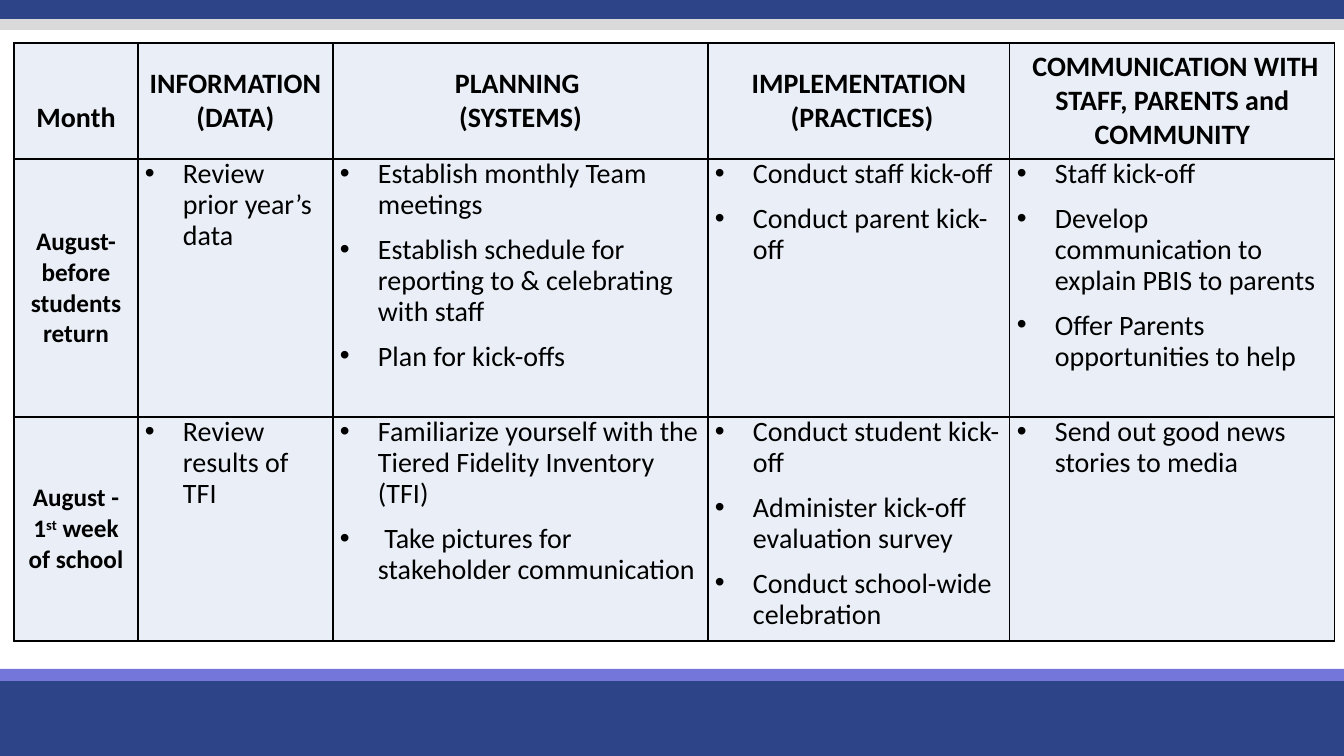
"""Build a monthly planning table slide with coloured bands above and below."""
from lxml import etree
from pptx import Presentation
from pptx import util as u
from pptx.dml.color import RGBColor
from pptx.enum import shapes, text
from pptx.oxml import ns

NAVY = RGBColor(0x2E, 0x44, 0x88)
VIOLET = RGBColor(0x74, 0x76, 0xDA)
GREY = RGBColor(0xD9, 0xD9, 0xD9)
PALE = RGBColor(0xEA, 0xEF, 0xF7)
BLACK = RGBColor(0, 0, 0)

BANDS = [(675, 81, NAVY), (669, 12, VIOLET), (-3, 22, NAVY), (19, 11, GREY)]
COLS = [124, 195, 375, 302, 325]
ROWS = [116, 258, 224]
INDENT = 38

HEADERS = [
    ["Month"],
    ["INFORMATION", "(DATA)"],
    ["PLANNING ", "(SYSTEMS)"],
    ["IMPLEMENTATION", " (PRACTICES)"],
    [" COMMUNICATION WITH STAFF, PARENTS and COMMUNITY"],
]
MONTHS = [
    (
        [("August- before students return", 0)],
        [
            ["Review prior year’s data"],
            [
                "Establish monthly Team meetings",
                "Establish schedule for reporting to & celebrating with staff",
                "Plan for kick-offs",
            ],
            ["Conduct staff kick-off", "Conduct parent kick-off"],
            [
                "Staff kick-off",
                "Develop communication to explain PBIS to parents",
                "Offer Parents opportunities to help",
            ],
        ],
    ),
    (
        [("August - 1", 0), ("st", 30000), (" week of school", 0)],
        [
            ["Review results of TFI"],
            [
                "Familiarize yourself with the Tiered Fidelity Inventory (TFI)",
                " Take pictures for stakeholder communication",
            ],
            [
                "Conduct student kick-off",
                "Administer kick-off evaluation survey",
                "Conduct school-wide celebration",
            ],
            ["Send out good news stories to media"],
        ],
    ),
]

HEADING = {"name": "Calibri", "size": u.Pt(20), "bold": True}
MONTH = {**HEADING, "size": u.Pt(18)}
ITEM = {**HEADING, "bold": False}
CENTRED = {"alignment": text.PP_ALIGN.CENTER}
LISTED = {"alignment": text.PP_ALIGN.LEFT, "line_spacing": 0.9}


def px(n):
    """Turn px into EMU."""
    return u.Emu(round(n * 914400 / 100.8))


def apply(obj, values):
    """Set each named value on an object."""
    for name, value in values.items():
        setattr(obj, name, value)


def add_band(s, top, height, color):
    """Add a full-width band."""
    sp = s.shapes.add_shape(
        shapes.MSO_SHAPE.RECTANGLE, 0, px(top), px(1344), px(height))
    sp.shadow.inherit = False
    sp.fill.solid()
    sp.fill.fore_color.rgb = color
    sp.line.fill.background()


def add_run(p, words, font, baseline=0):
    """Add a formatted run, raised if a baseline is given."""
    r = p.add_run()
    r.text = words
    apply(r.font, font)
    r.font.color.rgb = BLACK
    if baseline:
        r.font._element.set("baseline", str(baseline))


def add_bullet(p):
    """Give a paragraph a hanging bullet."""
    pPr = p._p.get_or_add_pPr()
    pPr.set("marL", str(px(INDENT)))
    pPr.set("indent", str(-px(INDENT)))
    etree.SubElement(pPr, ns.qn("a:buFont"), typeface="Arial")
    etree.SubElement(pPr, ns.qn("a:buChar"), char="•")


def style_cell(cell, anchor, top=0):
    """Set a cell's fill, margins, anchor and borders."""
    apply(cell, {"margin_left": px(7), "margin_right": px(7),
                 "margin_top": px(top), "margin_bottom": 0,
                 "vertical_anchor": anchor})
    cell.fill.solid()
    cell.fill.fore_color.rgb = PALE
    tcPr = cell._tc.get_or_add_tcPr()
    for i, side in enumerate("LRTB"):
        ln = etree.Element(ns.qn("a:ln" + side), w=str(u.Pt(1)))
        fill = etree.SubElement(ln, ns.qn("a:solidFill"))
        etree.SubElement(fill, ns.qn("a:srgbClr"), val=str(BLACK))
        tcPr.insert(i, ln)


def fill_cell(cell, paragraphs, font, layout, bullets=False):
    """Write paragraphs, each a list of (words, baseline) runs."""
    tf = cell.text_frame
    for i, runs in enumerate(paragraphs):
        p = tf.add_paragraph() if i else tf.paragraphs[0]
        if bullets:
            add_bullet(p)
            if i:
                p.space_before = u.Pt(10)
        apply(p, layout)
        for words, baseline in runs:
            add_run(p, words, font, baseline)


def plain(lines):
    """Make each line a paragraph of one run."""
    return [[(line, 0)] for line in lines]


def add_plan(s):
    """Add the planning table."""
    table = s.shapes.add_table(
        len(ROWS), len(COLS), px(14), px(43), px(sum(COLS)), px(sum(ROWS))).table
    apply(table, {"first_row": False, "horz_banding": False})
    for col, width in zip(table.columns, COLS):
        col.width = px(width)
    for row, height in zip(table.rows, ROWS):
        row.height = px(height)
    middle, top = text.MSO_ANCHOR.MIDDLE, text.MSO_ANCHOR.TOP
    for c, lines in enumerate(HEADERS):
        cell = table.cell(0, c)
        style_cell(cell, middle, 0 if c else 34)
        fill_cell(cell, plain(lines), HEADING, CENTRED)
    for r, (month, tasks) in enumerate(MONTHS, 1):
        cell = table.cell(r, 0)
        style_cell(cell, middle)
        fill_cell(cell, [month], MONTH, CENTRED)
        for c, items in enumerate(tasks, 1):
            cell = table.cell(r, c)
            style_cell(cell, top)
            fill_cell(cell, plain(items), ITEM, LISTED, bullets=True)


def main():
    """Build and save the slide."""
    prs = Presentation()
    apply(prs, {"slide_width": px(1344), "slide_height": px(756)})
    s = prs.slides.add_slide(prs.slide_layouts[6])
    for band in BANDS:
        add_band(s, *band)
    add_plan(s)
    prs.save("out.pptx")


if __name__ == "__main__":
    main()
